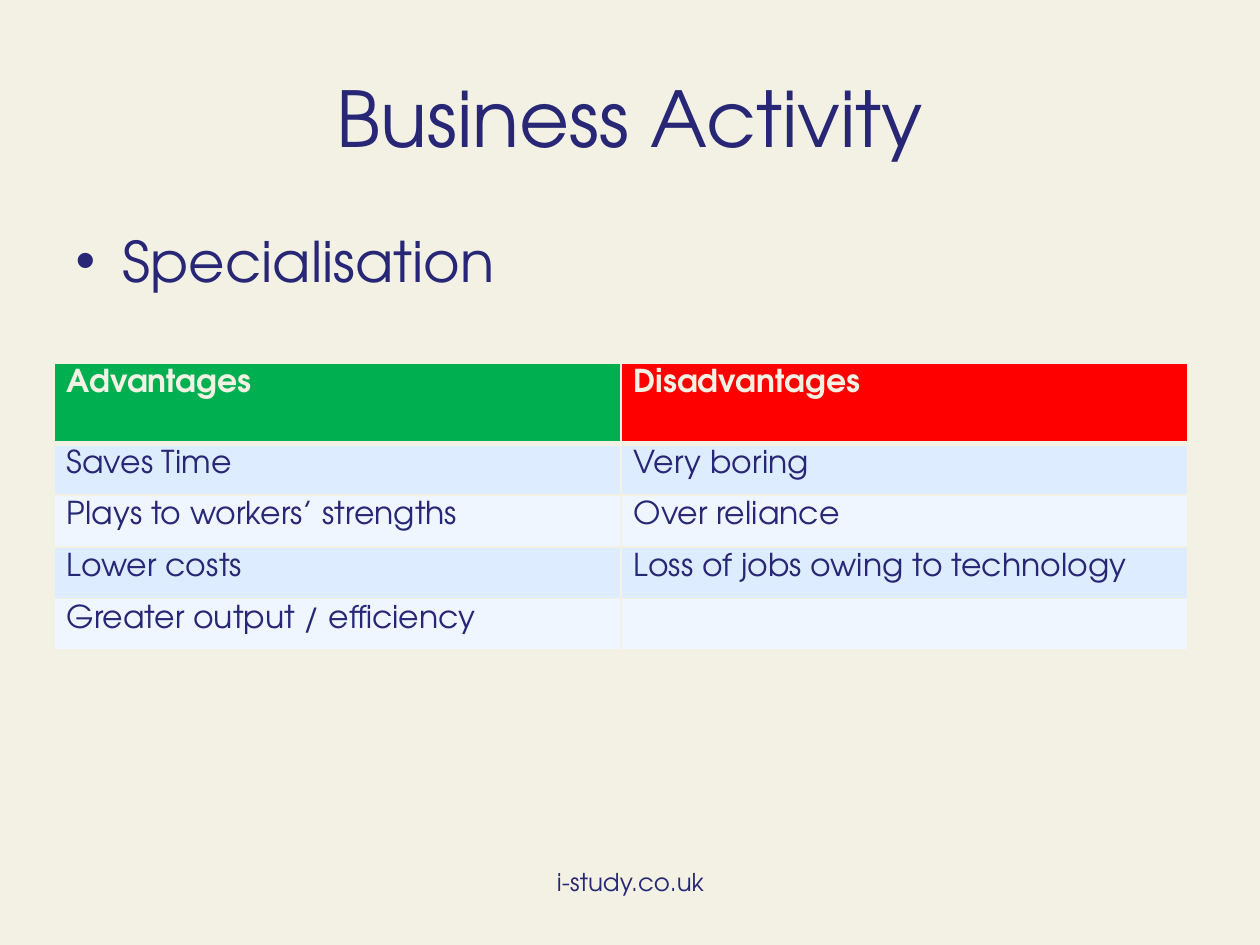
import dataclasses

import pptx
import pptx.dml.color
import pptx.enum.text
import pptx.oxml
import pptx.oxml.ns
import pptx.util
from pptx.util import Inches

FONT = "TeX Gyre Adventor"
NAVY, CREAM = "272776", "F3F1E4"
GREEN, RED = "00B050", "FF0000"
BANDS = ("DEECFF", "EFF6FF")
CENTER = pptx.enum.text.PP_ALIGN.CENTER
LEFT = pptx.enum.text.PP_ALIGN.LEFT
MIDDLE = pptx.enum.text.MSO_ANCHOR.MIDDLE
TOP = pptx.enum.text.MSO_ANCHOR.TOP


@dataclasses.dataclass
class TableRow:
    texts: tuple[str, str]
    fills: tuple[str, str]
    height: float = 0.41
    color: str = NAVY
    bold: bool = False
    top_border: float = 1
    bottom_border: float = 1


ROWS = [
    TableRow(("Advantages", "Disadvantages"), (GREEN, RED), height=0.64,
             color=CREAM, bold=True, bottom_border=3),
    TableRow(("Saves Time", "Very boring"), (BANDS[0],) * 2, top_border=3),
    TableRow(("Plays to workers’ strengths", "Over reliance"), (BANDS[1],) * 2),
    TableRow(("Lower costs", "Loss of jobs owing to technology"), (BANDS[0],) * 2),
    TableRow(("Greater output / efficiency", ""), (BANDS[1],) * 2),
]


def set_color(color_format, hex_color: str) -> None:
    color_format.rgb = pptx.dml.color.RGBColor.from_string(hex_color)


def set_fill(fill, hex_color: str) -> None:
    fill.solid()
    set_color(fill.fore_color, hex_color)


def write_text(text_frame, text: str, *, size: float, color: str = NAVY,
               bold: bool = False, align=LEFT, anchor=None) -> None:
    text_frame.word_wrap = True
    if anchor is not None:
        text_frame.vertical_anchor = anchor
    paragraph = text_frame.paragraphs[0]
    paragraph.text = text
    paragraph.alignment = align
    paragraph.space_before = pptx.util.Pt(0)
    font = paragraph.font
    font.name, font.size, font.bold = FONT, pptx.util.Pt(size), bold
    set_color(font.color, color)


def place(shape, left: float, top: float, width: float, height: float) -> None:
    shape.left, shape.top = Inches(left), Inches(top)
    shape.width, shape.height = Inches(width), Inches(height)


def set_borders(cell, top: float, bottom: float) -> None:
    properties = cell._tc.get_or_add_tcPr()
    widths = {"lnL": 1, "lnR": 1, "lnT": top, "lnB": bottom}
    for index, (side, width) in enumerate(widths.items()):
        line = pptx.oxml.parse_xml(
            f'<a:{side} {pptx.oxml.ns.nsdecls("a")} w="{pptx.util.Pt(width)}">'
            f'<a:solidFill><a:srgbClr val="{CREAM}"/></a:solidFill></a:{side}>')
        properties.insert(index, line)


def add_comparison_table(slide, rows: list[TableRow]) -> None:
    height = sum(row.height for row in rows)
    table = slide.shapes.add_table(len(rows), 2, Inches(0.43), Inches(2.88),
                                   Inches(9), Inches(height)).table
    for row_index, row in enumerate(rows):
        table.rows[row_index].height = Inches(row.height)
        for column_index, (text, fill) in enumerate(zip(row.texts, row.fills)):
            cell = table.cell(row_index, column_index)
            write_text(cell.text_frame, text, size=18, color=row.color, bold=row.bold)
            set_fill(cell.fill, fill)
            set_borders(cell, row.top_border, row.bottom_border)


def main() -> None:
    presentation = pptx.Presentation()
    presentation.slide_width, presentation.slide_height = Inches(10), Inches(7.5)
    slide = presentation.slides.add_slide(presentation.slide_layouts[1])
    set_fill(slide.background.fill, CREAM)

    # Title and topic
    title, body = slide.placeholders
    place(title, 0.5, 0.3, 9, 1.25)
    write_text(title.text_frame, "Business Activity", size=44, align=CENTER, anchor=MIDDLE)
    place(body, 0.5, 1.75, 9, 4.95)
    write_text(body.text_frame, "Specialisation", size=32, anchor=TOP)

    # Advantages and disadvantages
    add_comparison_table(slide, ROWS)

    # Web address at the foot
    footer = slide.shapes.add_textbox(Inches(3.42), Inches(6.83), Inches(3.17), Inches(0.52))
    write_text(footer.text_frame, "i-study.co.uk", size=14, align=CENTER)

    presentation.save("out.pptx")


if __name__ == "__main__":
    main()
